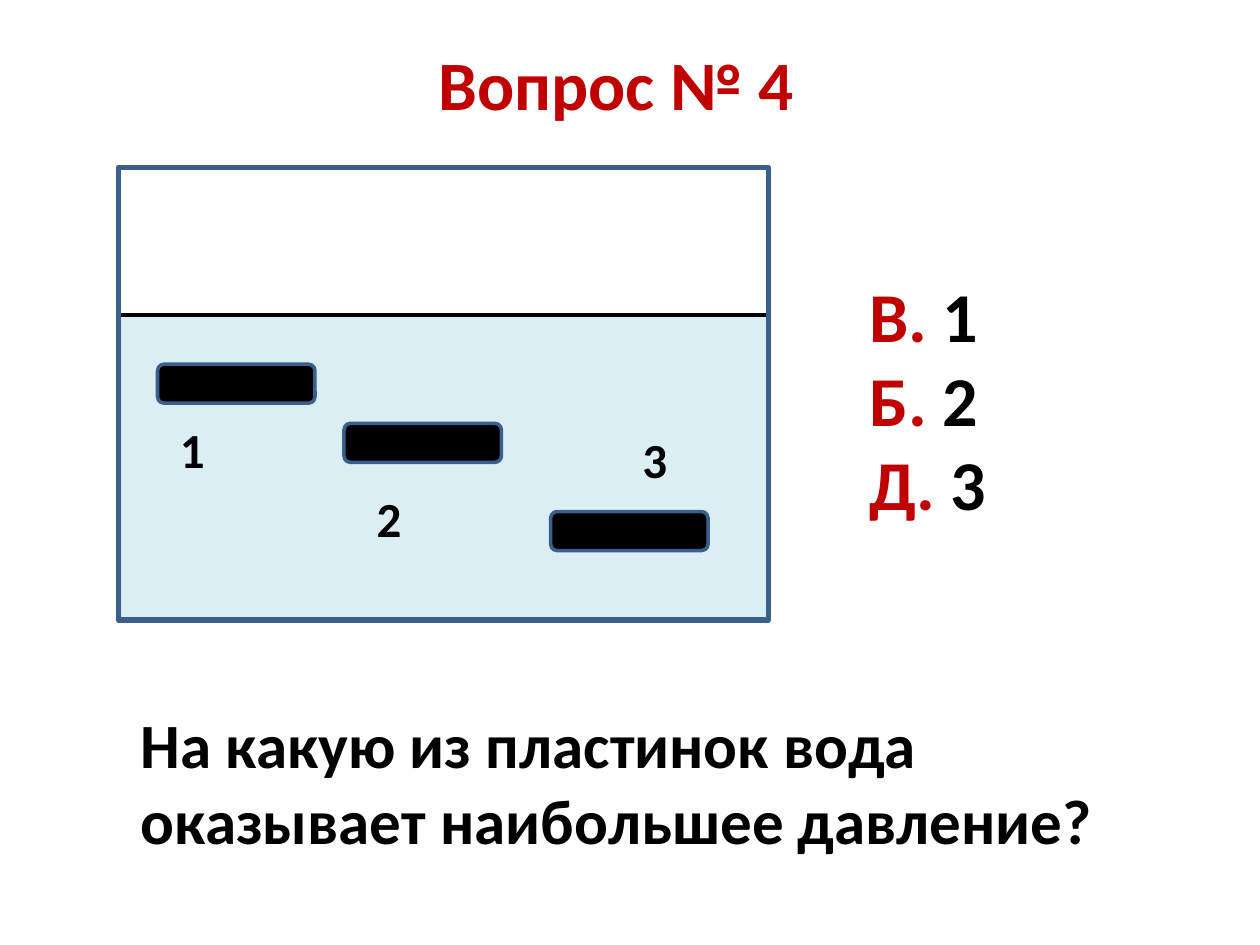
from pptx import Presentation
from pptx.dml.color import RGBColor
from pptx.enum.shapes import MSO_SHAPE
from pptx.enum.text import MSO_ANCHOR, PP_ALIGN
from pptx.util import Inches, Pt

RECTANGLE = MSO_SHAPE.RECTANGLE
ROUNDED = MSO_SHAPE.ROUNDED_RECTANGLE
MIDDLE = MSO_ANCHOR.MIDDLE
CENTER = PP_ALIGN.CENTER

RED = RGBColor(0xC0, 0x00, 0x00)
BLACK = RGBColor(0x00, 0x00, 0x00)
WATER = RGBColor(0xDB, 0xEE, 0xF4)
STEEL = RGBColor(0x3A, 0x5F, 0x8C)

TANK_LEFT, TANK_TOP, TANK_WIDTH, TANK_HEIGHT = 0.94, 1.33, 5.16, 3.59
WATER_TOP = 2.5
PLATE_SIZE = (1.25, 0.31)
NUMBER_SIZE = (0.86, 0.57)
PLATES = [
    ("1", (1.25, 2.89), (1.33, 3.28)),
    ("2", (2.73, 3.36), (2.89, 3.83)),
    ("3", (4.37, 4.06), (5, 3.36)),
]
ANSWERS = [("В.", " 1"), ("Б.", " 2"), ("Д.", " 3")]


def inches(*lengths):
    return [Inches(length) for length in lengths]


def add_run(paragraph, text, size, color):
    run = paragraph.add_run()
    run.text = text
    run.font.name = "Calibri"
    run.font.size = Pt(size)
    run.font.bold = True
    run.font.color.rgb = color


def set_title(slide, text):
    title = slide.shapes.title
    title.left, title.top, title.width, title.height = inches(0.39, 0.31, 9, 0.7)
    title.text_frame.vertical_anchor = MIDDLE
    heading = title.text_frame.paragraphs[0]
    heading.alignment = CENTER
    add_run(heading, text, 39.6, RED)


def add_block(slide, preset, box, fill, line, line_width):
    block = slide.shapes.add_shape(preset, *inches(*box))
    block.shadow.inherit = False
    if fill is None:
        block.fill.background()
    else:
        block.fill.solid()
        block.fill.fore_color.rgb = fill
    block.line.color.rgb = line
    block.line.width = Pt(line_width)


def add_text(slide, box, lines, size):
    frame = slide.shapes.add_textbox(*inches(*box)).text_frame
    frame.word_wrap = True
    for index, runs in enumerate(lines):
        paragraph = frame.add_paragraph() if index else frame.paragraphs[0]
        for text, color in runs:
            add_run(paragraph, text, size, color)


def add_tank(slide):
    water_height = TANK_TOP + TANK_HEIGHT - WATER_TOP
    add_block(slide, RECTANGLE, (TANK_LEFT, WATER_TOP, TANK_WIDTH, water_height),
              WATER, BLACK, 2)
    add_block(slide, RECTANGLE, (TANK_LEFT, TANK_TOP, TANK_WIDTH, TANK_HEIGHT),
              None, STEEL, 3)


def add_plates(slide):
    for _, corner, _ in PLATES:
        add_block(slide, ROUNDED, corner + PLATE_SIZE, BLACK, STEEL, 2)
    for number, _, corner in PLATES:
        add_text(slide, corner + NUMBER_SIZE, [[(number, BLACK)]], 28)


def main():
    presentation = Presentation()
    presentation.slide_width, presentation.slide_height = inches(10, 7.5)
    slide = presentation.slides.add_slide(presentation.slide_layouts[5])
    set_title(slide, "Вопрос № 4")
    add_tank(slide)
    add_plates(slide)
    answers = [[(letter, RED), (value, BLACK)] for letter, value in ANSWERS]
    add_text(slide, (6.8, 2.11, 2.42, 2.12), answers, 40)
    question = "На какую из пластинок вода оказывает наибольшее давление?"
    add_text(slide, (1.02, 5.55, 8.36, 1.31), [[(question, BLACK)]], 36)
    presentation.save("out.pptx")


if __name__ == "__main__":
    main()
